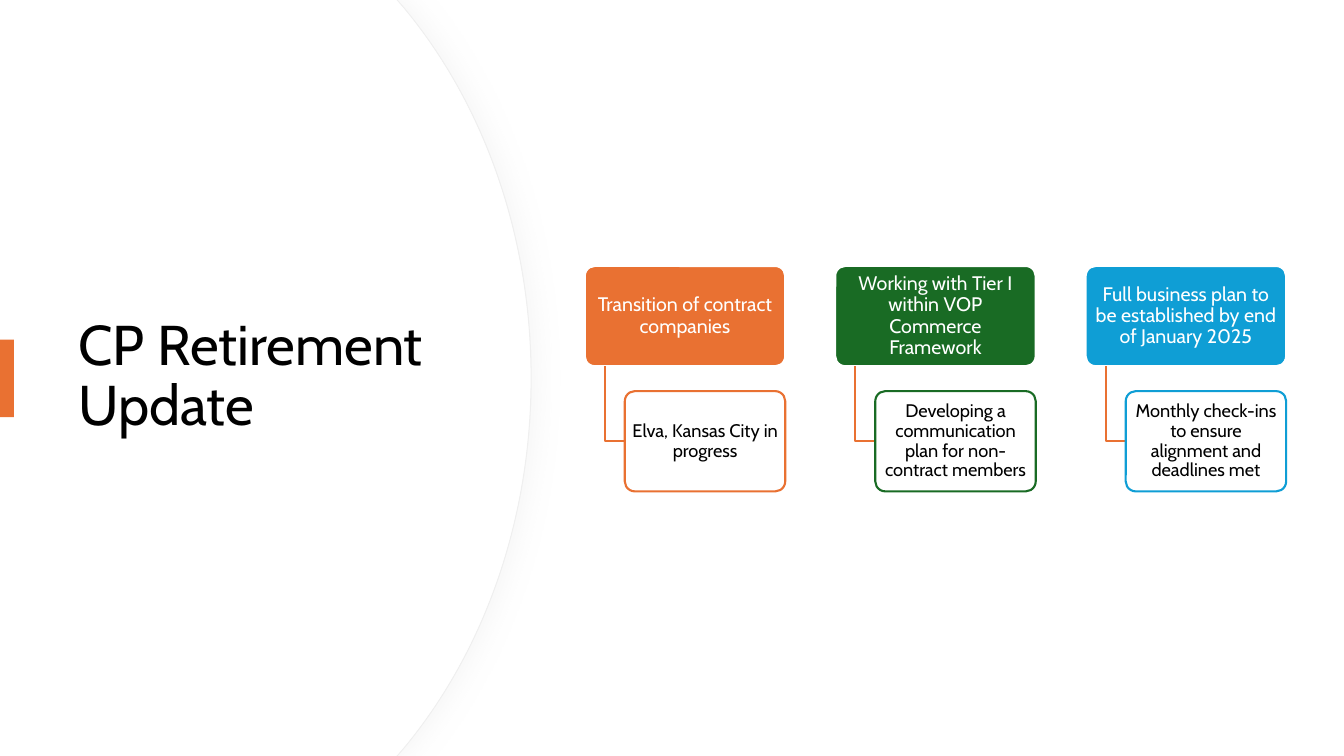
from lxml import etree
from pptx import Presentation
from pptx.dml.color import RGBColor
from pptx.enum.shapes import MSO_SHAPE as Preset
from pptx.enum.text import MSO_ANCHOR as Anchor, PP_ALIGN as Align
from pptx.oxml import parse_xml
from pptx.oxml.ns import nsdecls, qn
from pptx.util import Pt

FONT = "Cabin"
WHITE = RGBColor(0xFF, 0xFF, 0xFF)
BLACK = RGBColor(0, 0, 0)
ORANGE = RGBColor(0xE9, 0x71, 0x32)
GREEN = RGBColor(0x19, 0x6B, 0x24)
BLUE = RGBColor(0x0F, 0x9E, 0xD5)
PALE_GREY = RGBColor(0xEF, 0xEF, 0xEF)


def add_text(left, top, width, height, text, size, color, align):
    """Add a wrapped, middle-anchored text box and return its frame."""
    box = page.shapes.add_textbox(Pt(left), Pt(top), Pt(width), Pt(height))
    frame = box.text_frame
    frame.word_wrap = True
    frame.vertical_anchor = Anchor.MIDDLE
    para = frame.paragraphs[0]
    para.text = text
    para.alignment = align
    para.line_spacing = 0.9
    para.font.name = FONT
    para.font.size = Pt(size)
    para.font.color.rgb = color
    return frame


def add_card(left, top, width, height, fill, outline, text, size, color):
    """Add a rounded card with centred text over it and return the card."""
    card = page.shapes.add_shape(
        Preset.ROUNDED_RECTANGLE, Pt(left), Pt(top), Pt(width), Pt(height))
    card.adjustments[0] = 0.1
    card.shadow.inherit = False
    card.fill.solid()
    card.fill.fore_color.rgb = fill
    card.line.color.rgb = outline
    card.line.width = Pt(1.5)
    frame = add_text(left + 2.1, top + 2.1, width - 4.2, height - 4.2,
                     text, size, color, Align.CENTER)
    frame.margin_left = frame.margin_right = Pt(2.7)
    frame.margin_top = frame.margin_bottom = Pt(1.5)
    return card


deck = Presentation()
deck.slide_width, deck.slide_height = Pt(960), Pt(540)
page = deck.slides.add_slide(deck.slide_layouts[6])

# Curved title panel: a shadowed, outlined layer under a plain white one
UPPER = [(283.7, 0), (288.7, 5.8), (344.9, 73.4), (379.4, 167), (379.4, 270)]
LOWER = [(x, 540 - y) for x, y in reversed(UPPER[:-1])]

for inset, outlined in ((0, True), (0.7, False)):
    outline = page.shapes.build_freeform(0, 0, scale=1)
    edge = [(Pt(x - inset), Pt(y)) for x, y in UPPER + LOWER]
    outline.add_line_segments(edge + [(0, Pt(540))], close=True)
    panel = outline.convert_to_shape()
    panel.shadow.inherit = False
    panel.fill.solid()
    panel.fill.fore_color.rgb = WHITE

    # Corners 2-4 and 5-7 are the control and end points of two curves
    corners = list(panel.element.spPr.iter(qn("a:lnTo")))
    for first in (2, 5):
        curve = etree.Element(qn("a:cubicBezTo"))
        corners[first].addprevious(curve)
        for corner in corners[first:first + 3]:
            curve.append(corner[0])
            corner.getparent().remove(corner)

    if outlined:
        panel.line.color.rgb = PALE_GREY
        panel.line.width = Pt(0.75)
        effects = panel.element.spPr.find(qn("a:effectLst"))
        effects.append(parse_xml(
            f'<a:outerShdw {nsdecls("a")} blurRad="{Pt(20)}" dist="{Pt(3)}" dir="0">'
            '<a:srgbClr val="D9D9D9"><a:alpha val="25000"/></a:srgbClr>'
            '</a:outerShdw>'))
    else:
        panel.line.fill.background()

add_text(49, 91.4, 283.7, 356.4, "CP Retirement Update", 40, BLACK, Align.LEFT)

accent = page.shapes.add_shape(Preset.RECTANGLE, 0, Pt(242.6), Pt(10), Pt(55.4))
accent.shadow.inherit = False
accent.fill.solid()
accent.fill.fore_color.rgb = ORANGE
accent.line.fill.background()

# Three topics, each with a detail card hanging from an elbow line
TOPICS = [
    (ORANGE, "Transition of contract companies",
     "Elva, Kansas City in progress"),
    (GREEN, "Working with Tier I within VOP Commerce Framework",
     "Developing a communication plan for non-contract members"),
    (BLUE, "Full business plan to be established by end of January 2025",
     "Monthly check-ins to ensure alignment and deadlines met"),
]
FIRST_LEFT, PITCH = 417.7, 178.9
TOPIC_TOP, DETAIL_TOP = 190, 279.4
TOPIC_WIDTH, CARD_HEIGHT = 143.2, 71.6
STEM, INDENT = 14.3, 28.6

for index, (color, topic, detail) in enumerate(TOPICS):
    left = FIRST_LEFT + index * PITCH
    detail_left = left + INDENT
    add_card(left, TOPIC_TOP, TOPIC_WIDTH, CARD_HEIGHT,
             color, WHITE, topic, 14, WHITE)

    stem_x = Pt(left + STEM)
    middle = Pt(DETAIL_TOP + CARD_HEIGHT / 2)
    route = page.shapes.build_freeform(stem_x, Pt(TOPIC_TOP + CARD_HEIGHT), scale=1)
    route.add_line_segments([(stem_x, middle), (Pt(detail_left), middle)], close=False)
    elbow = route.convert_to_shape()
    elbow.shadow.inherit = False
    elbow.fill.background()
    elbow.line.color.rgb = ORANGE
    elbow.line.width = Pt(1.5)

    card = add_card(detail_left, DETAIL_TOP, TOPIC_WIDTH - INDENT, CARD_HEIGHT,
                    WHITE, color, detail, 13, BLACK)
    tint = card.element.spPr.find(qn("a:solidFill"))[0]
    etree.SubElement(tint, qn("a:alpha"), val="90000")

deck.save("out.pptx")
